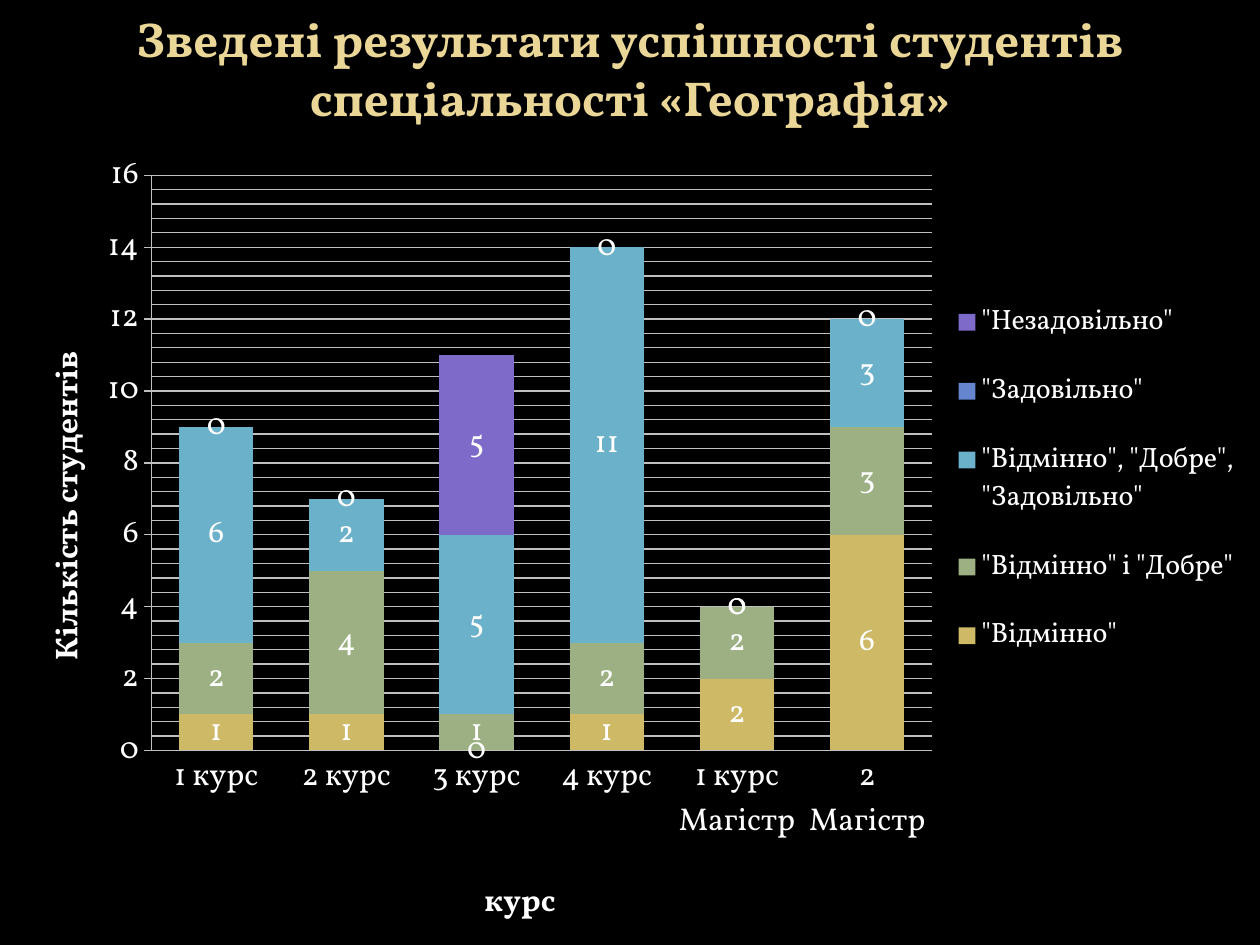
"""Build a slide with a stacked column chart of students' results by year of study."""
import copy

from lxml import etree
from pptx import Presentation
from pptx import util as u
from pptx.chart import data as chart_data
from pptx.dml.color import RGBColor
from pptx.enum import chart as kinds, text
from pptx.oxml import ns

COLORS = {"background": "000000", "title": "EAD696", "text": "FFFFFF", "line": "BFBFBF"}
FONT = "Vollkorn"
YEARS = ["1 курс", "2 курс", "3 курс", "4 курс", "1 курс Магістр", "2 Магістр"]
GRADES = [
    ('"Відмінно"', [1, 1, 0, 1, 2, 6], "CEB966", True),
    ('"Відмінно" і "Добре"', [2, 4, 1, 2, 2, 3], "9CB084", True),
    ('"Відмінно", "Добре", "Задовільно"', [6, 2, 5, 11, 0, 3], "6BB1C9", True),
    ('"Задовільно"', [0, 0, 0, 0, 0, 0], "6585CF", False),
    ('"Незадовільно"', [0, 0, 5, 0, 0, 0], "7E6BC9", True),
]


def write(frame, words, size=18, color="text", bold=True):
    para = frame.paragraphs[0]
    para.alignment = text.PP_ALIGN.CENTER
    span = para.add_run()
    span.text = words
    span.font.name, span.font.size, span.font.bold = FONT, u.Pt(size), bold
    span.font.color.rgb = RGBColor.from_string(COLORS[color])


def place(element, **fractions):
    for old in element.findall(ns.qn("c:layout")):
        element.remove(old)
    leading = [ns.qn(tag) for tag in ("c:tx", "c:legendPos", "c:legendEntry")]
    layout = etree.Element(ns.qn("c:layout"))
    manual = etree.SubElement(layout, ns.qn("c:manualLayout"))
    if element.tag == ns.qn("c:plotArea"):
        etree.SubElement(manual, ns.qn("c:layoutTarget"), val="inner")
    for mode in ("xMode", "yMode"):
        etree.SubElement(manual, ns.qn("c:" + mode), val="edge")
    for name, value in fractions.items():
        etree.SubElement(manual, ns.qn("c:" + name), val=str(value))
    element.insert(sum(child.tag in leading for child in element), layout)


deck = Presentation()
deck.slide_width, deck.slide_height = u.Inches(10), u.Inches(7.5)
page = deck.slides.add_slide(deck.slide_layouts[5])
page.background.fill.solid()
page.background.fill.fore_color.rgb = RGBColor.from_string(COLORS["background"])

title = page.shapes.title
title.left, title.top = u.Inches(0.5), u.Inches(0)
title.width, title.height = u.Inches(9), u.Inches(1.07)
title.text_frame.word_wrap = True
title.text_frame.vertical_anchor = text.MSO_ANCHOR.MIDDLE
write(title.text_frame, "Зведені результати успішності студентів спеціальності «Географія»",
      size=28, color="title")

results = chart_data.CategoryChartData()
results.categories = YEARS
for name, counts, _, _ in GRADES:
    results.add_series(name, counts)
chart = page.shapes.add_chart(
    kinds.XL_CHART_TYPE.COLUMN_STACKED,
    u.Inches(0), u.Inches(1.07), u.Inches(10), u.Inches(6.43), results).chart
chart.has_title = False
chart.font.name, chart.font.size = FONT, u.Pt(18)
chart.font.color.rgb = RGBColor.from_string(COLORS["text"])

plot = chart.plots[0]
plot.gap_width, plot.overlap, plot.vary_by_categories = 75, 100, False
for series, (_, _, color, labelled) in zip(plot.series, GRADES):
    series.format.fill.solid()
    series.format.fill.fore_color.rgb = RGBColor.from_string(color)
    if labelled:
        series.data_labels.show_value = True

years, students = chart.category_axis, chart.value_axis
students.minimum_scale, students.maximum_scale = 0, 16
students.major_unit, students.minor_unit = 2, 0.4
students.has_major_gridlines = students.has_minor_gridlines = True
students.major_tick_mark = kinds.XL_TICK_MARK.CROSS
years.major_tick_mark = kinds.XL_TICK_MARK.NONE
for lines in (years, students, students.major_gridlines):
    lines.format.line.width = u.Pt(0.75)
    lines.format.line.color.rgb = RGBColor.from_string(COLORS["line"])
major_grid = students._element.find(ns.qn("c:majorGridlines"))
minor_grid = students._element.find(ns.qn("c:minorGridlines"))
minor_grid.append(copy.deepcopy(major_grid.find(ns.qn("c:spPr"))))

write(years.axis_title.text_frame, "курс")
write(students.axis_title.text_frame, "Кількість студентів")
title_body = students.axis_title.text_frame._txBody.find(ns.qn("a:bodyPr"))
title_body.set("rot", "-5400000")
title_body.set("vert", "horz")

chart.has_legend = True
legend = chart.legend
legend.position = kinds.XL_LEGEND_POSITION.RIGHT
legend.include_in_layout = False
legend.font.name, legend.font.size = FONT, u.Pt(16)
legend.font.color.rgb = RGBColor.from_string(COLORS["text"])

place(chart._chartSpace.find(ns.qn("c:chart")).find(ns.qn("c:plotArea")),
      x=0.12, y=0.05, w=0.62, h=0.71)
place(legend._element, x=0.75, y=0.17, w=0.24, h=0.51)
place(years.axis_title._element, x=0.38, y=0.91)
place(students.axis_title._element, x=0.03, y=0.26)

deck.save("out.pptx")
